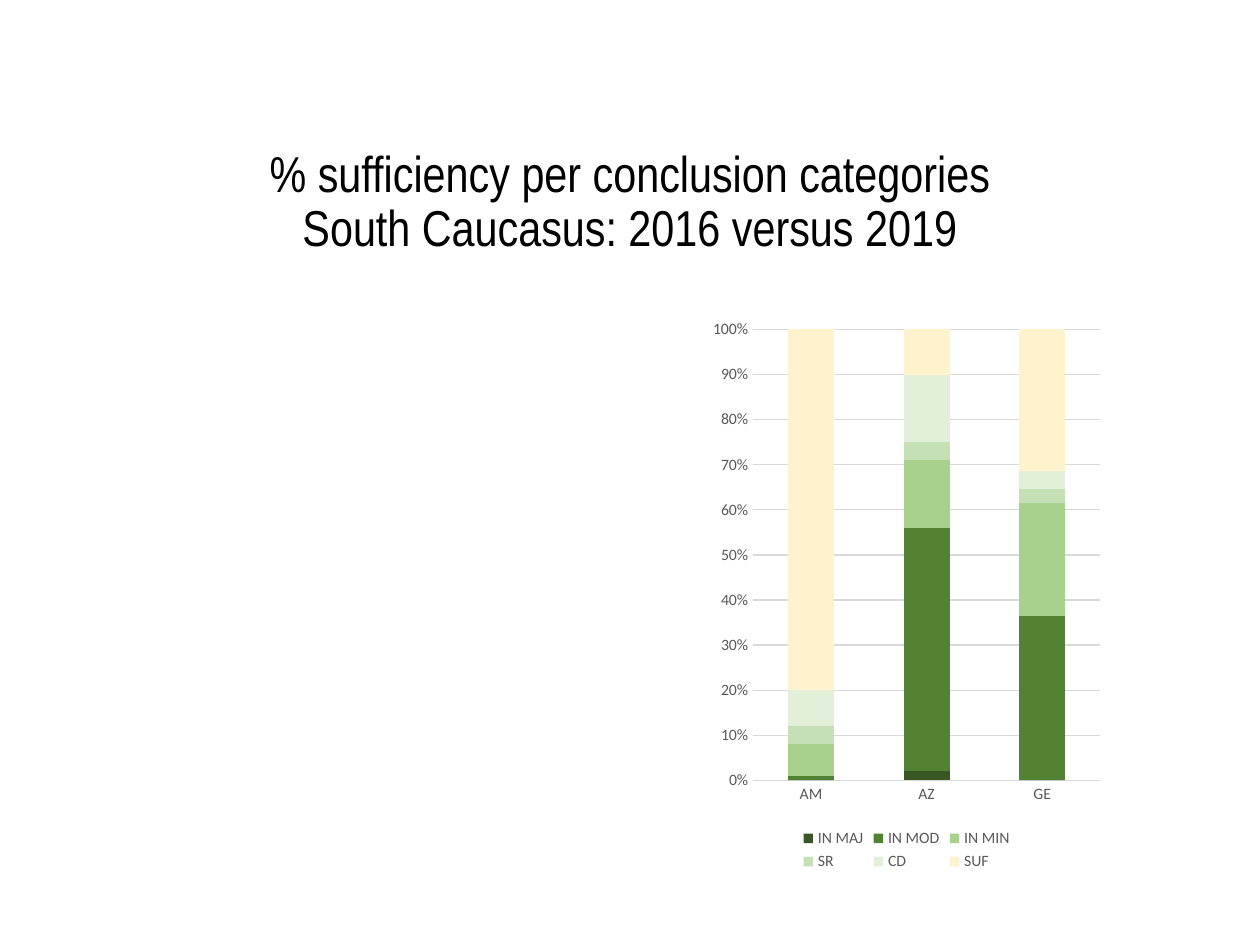
from lxml.etree import fromstring
from pptx import Presentation
from pptx.chart.data import CategoryChartData
from pptx.dml.color import RGBColor
from pptx.enum.chart import XL_CHART_TYPE, XL_LEGEND_POSITION, XL_TICK_MARK
from pptx.enum.text import MSO_ANCHOR, PP_ALIGN
from pptx.oxml.ns import nsdecls
from pptx.util import Inches, Pt

COLORS = {
    "title": "000000",
    "label": "595959",
    "grid": "D9D9D9",
    "ground": "FFFFFF",
    "IN MAJ": "385723",
    "IN MOD": "548235",
    "IN MIN": "A9D18E",
    "SR": "C5E0B4",
    "CD": "E2F0D9",
    "SUF": "FFF2CC",
}
COUNTRIES = ["AM", "AZ", "GE"]
CONCLUSIONS = {
    "IN MAJ": (0, 2, 0),
    "IN MOD": (1, 54, 36),
    "IN MIN": (7, 15, 25),
    "SR": (4, 4, 3),
    "CD": (8, 15, 4),
    "SUF": (80, 10, 31),
}


def color(name):
    return RGBColor.from_string(COLORS[name])


def set_font(font, **values):
    for attribute, value in values.items():
        setattr(font, attribute, value)


deck = Presentation()
deck.slide_width, deck.slide_height = Inches(10), Inches(7.5)
W, H = deck.slide_width, deck.slide_height
slide = deck.slides.add_slide(deck.slide_layouts[6])

heading = slide.shapes.add_textbox(
    int(W * 0.145), int(H * 0.151), int(W * 0.71), int(H * 0.128)
).text_frame
heading.word_wrap = True
heading.vertical_anchor = MSO_ANCHOR.MIDDLE
headline = heading.paragraphs[0]
headline.text = "% sufficiency per conclusion categories\vSouth Caucasus: 2016 versus 2019"
headline.alignment = PP_ALIGN.CENTER
headline.line_spacing = 0.9
for run in headline.runs:
    set_font(run.font, name="Arial Narrow", size=Pt(28.8))
    run.font.color.rgb = color("title")

sufficiency = CategoryChartData(number_format="0")
sufficiency.categories = COUNTRIES
for conclusion, shares in CONCLUSIONS.items():
    sufficiency.add_series(conclusion, shares)
chart = slide.shapes.add_chart(
    XL_CHART_TYPE.COLUMN_STACKED_100,
    int(W * 0.5595), int(H * 0.327), int(W * 0.32), int(H * 0.6),
    sufficiency,
).chart
chart.has_title = False
set_font(chart.font, name="Calibri", size=Pt(10))
chart.font.color.rgb = color("title")
chart.element.chart.addnext(fromstring(
    f'<c:spPr {nsdecls("c", "a")}><a:solidFill><a:srgbClr val="{COLORS["ground"]}"/>'
    "</a:solidFill><a:ln><a:noFill/></a:ln></c:spPr>"
))

columns = chart.plots[0]
for attribute, value in {"gap_width": 150, "overlap": 100, "vary_by_categories": False}.items():
    setattr(columns, attribute, value)
for series in columns.series:
    series.format.fill.solid()
    series.format.fill.fore_color.rgb = color(series.name)

countries, percent = chart.category_axis, chart.value_axis
for axis in (countries, percent):
    axis.major_tick_mark = axis.minor_tick_mark = XL_TICK_MARK.NONE
percent.has_major_gridlines = True
percent.tick_labels.number_format = "0%"
percent.tick_labels.number_format_is_linked = False
percent.format.line.fill.background()
for line in (countries.format.line, percent.major_gridlines.format.line):
    line.color.rgb = color("grid")
    line.width = Pt(0.75)

chart.has_legend = True
chart.legend.position = XL_LEGEND_POSITION.BOTTOM
chart.legend.include_in_layout = False
for font in (countries.tick_labels.font, percent.tick_labels.font, chart.legend.font):
    set_font(font, name="Calibri", size=Pt(9))
    font.color.rgb = color("label")

deck.save("out.pptx")
